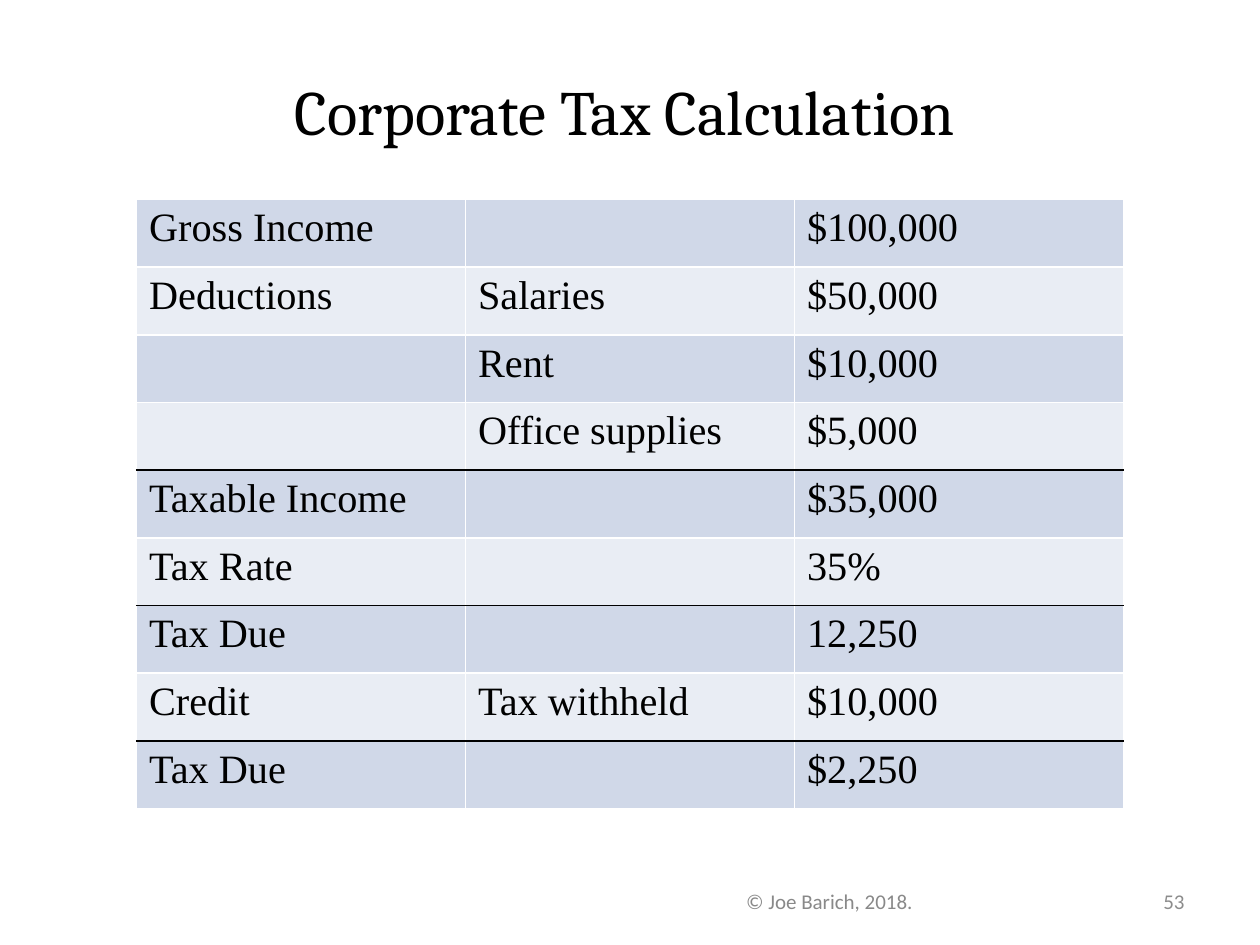
from dataclasses import dataclass

from lxml import etree
from pptx import Presentation
from pptx import util as u
from pptx.dml.color import RGBColor
from pptx.enum import text
from pptx.oxml.ns import qn


@dataclass(frozen=True)
class Theme:
    ink: str = "000000"
    border: str = "FFFFFF"
    bands: tuple[str, str] = ("D0D8E8", "E9EDF4")
    footer_ink: str = "898989"
    number_ink: str = "8C8C8C"
    title_font: str = "Cambria"
    table_font: str = "Times New Roman"
    footer_font: str = "Calibri"
    title_size: int = 36
    table_size: int = 23
    footer_size: int = 12
    border_width: int = 1


@dataclass(frozen=True)
class Area:
    column: float
    row: float
    columns: float
    rows: float

    def lengths(self) -> list[int]:
        return [round(units * GRID_UNIT) for units in (self.column, self.row, self.columns, self.rows)]


@dataclass(frozen=True)
class TaxLine:
    item: str
    detail: str
    amount: str
    ruled_below: bool = False


THEME = Theme()
GRID_UNIT = u.Inches(1) / 12
TITLE_AREA = Area(3, 2, 113, 17)
TABLE_AREA = Area(13, 19, 94, 58)
FOOTER_AREA = Area(60, 83.4, 38, 4.8)
NUMBER_AREA = Area(100, 83.4, 14, 4.8)
TAX_LINES = [
    TaxLine("Gross Income", "", "$100,000"),
    TaxLine("Deductions", "Salaries", "$50,000"),
    TaxLine("", "Rent", "$10,000"),
    TaxLine("", "Office supplies", "$5,000", ruled_below=True),
    TaxLine("Taxable Income", "", "$35,000"),
    TaxLine("Tax Rate", "", "35%", ruled_below=True),
    TaxLine("Tax Due", "", "12,250"),
    TaxLine("Credit", "Tax withheld", "$10,000", ruled_below=True),
    TaxLine("Tax Due", "", "$2,250"),
]


def write(frame, words: str, *, font: str, size: int, color: str,
          align=text.PP_ALIGN.LEFT) -> None:
    paragraph = frame.paragraphs[0]
    paragraph.alignment = align
    paragraph.font.size = u.Pt(size)
    if words:
        run = paragraph.add_run()
        run.text = words
        run.font.name = font
        run.font.size = u.Pt(size)
        run.font.color.rgb = RGBColor.from_string(color)


def add_label(slide, area: Area, words: str, **text_format) -> None:
    frame = slide.shapes.add_textbox(*area.lengths()).text_frame
    frame.word_wrap = True
    frame.vertical_anchor = text.MSO_ANCHOR.MIDDLE
    write(frame, words, **text_format)


def set_borders(cell, *, top: str, bottom: str) -> None:
    properties = cell._tc.get_or_add_tcPr()
    sides = {"lnL": THEME.border, "lnR": THEME.border, "lnT": top, "lnB": bottom}
    for side, color in sides.items():
        line = etree.SubElement(properties, qn(f"a:{side}"), w=str(u.Pt(THEME.border_width)))
        fill = etree.SubElement(line, qn("a:solidFill"))
        etree.SubElement(fill, qn("a:srgbClr"), val=color)


def add_tax_table(slide, area: Area, tax_lines: list[TaxLine]) -> None:
    table = slide.shapes.add_table(len(tax_lines), 3, *area.lengths()).table
    top = THEME.border
    for row, tax_line in enumerate(tax_lines):
        bottom = THEME.ink if tax_line.ruled_below else THEME.border
        for column, words in enumerate((tax_line.item, tax_line.detail, tax_line.amount)):
            cell = table.cell(row, column)
            set_borders(cell, top=top, bottom=bottom)
            cell.fill.solid()
            cell.fill.fore_color.rgb = RGBColor.from_string(THEME.bands[row % 2])
            write(cell.text_frame, words, font=THEME.table_font,
                  size=THEME.table_size, color=THEME.ink)
        top = bottom


def main() -> None:
    presentation = Presentation()
    presentation.slide_width = u.Inches(10)
    presentation.slide_height = u.Inches(7.5)
    slide = presentation.slides.add_slide(presentation.slide_layouts[6])
    add_label(slide, TITLE_AREA, "Corporate Tax Calculation", font=THEME.title_font,
              size=THEME.title_size, color=THEME.ink, align=text.PP_ALIGN.CENTER)
    add_tax_table(slide, TABLE_AREA, TAX_LINES)
    add_label(slide, NUMBER_AREA, "53", font=THEME.footer_font,
              size=THEME.footer_size, color=THEME.number_ink, align=text.PP_ALIGN.RIGHT)
    add_label(slide, FOOTER_AREA, "© Joe Barich, 2018.", font=THEME.footer_font,
              size=THEME.footer_size, color=THEME.footer_ink, align=text.PP_ALIGN.CENTER)
    presentation.save("out.pptx")


if __name__ == "__main__":
    main()
